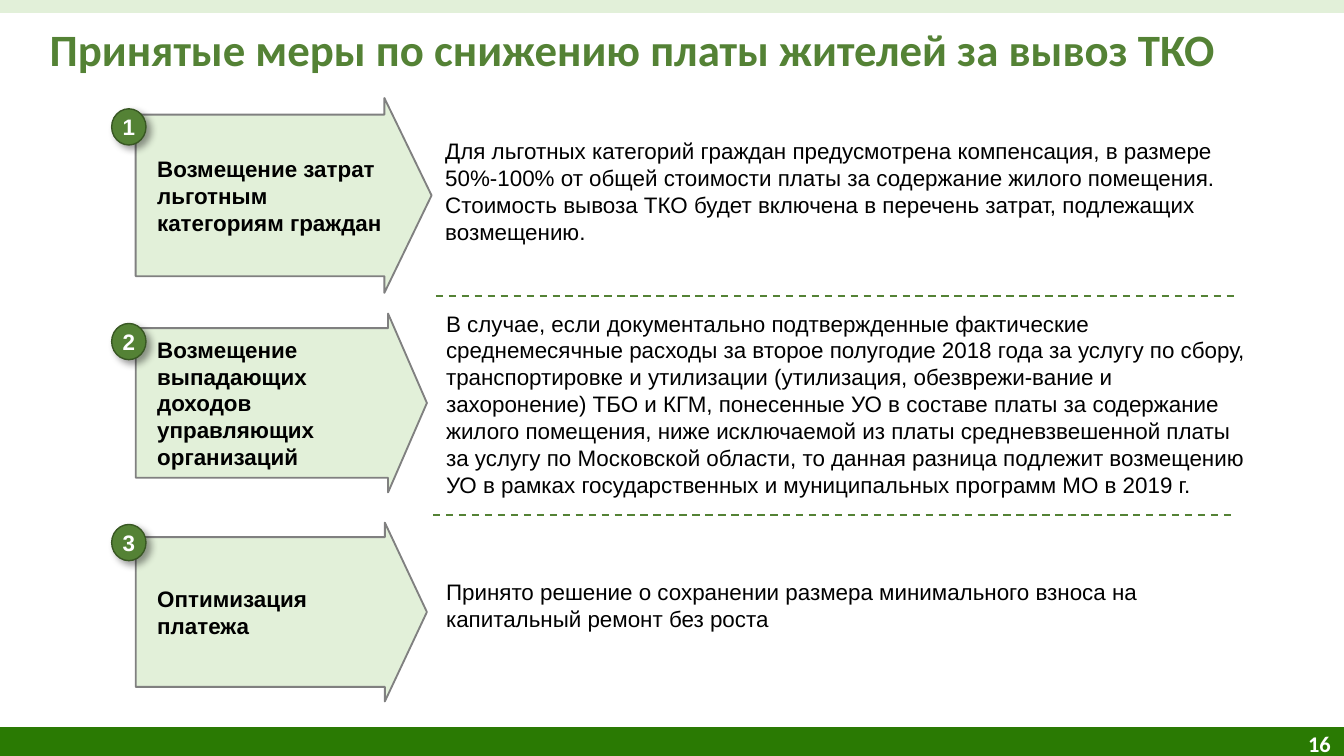
"""Build the slide on measures that lower waste removal payments."""
import pptx
import pptx.util
import pptx.dml.color
import pptx.enum.dml
import pptx.enum.shapes
import pptx.enum.text
import pptx.oxml
import pptx.oxml.ns

Pt = pptx.util.Pt
SHAPE = pptx.enum.shapes.MSO_SHAPE
ALIGN = pptx.enum.text.PP_ALIGN
ANCHOR = pptx.enum.text.MSO_ANCHOR
FIT = pptx.enum.text.MSO_AUTO_SIZE

COLOURS = {
    "pale": "E2F0D9",
    "green": "548235",
    "dark": "385723",
    "footer": "2A7A03",
    "grey": "808080",
    "black": "000000",
    "white": "FFFFFF",
}

NO_MARGINS = {"margin_left": 0, "margin_top": 0, "margin_right": 0, "margin_bottom": 0}
HEADING_FRAME = {**NO_MARGINS, "word_wrap": True, "auto_size": FIT.SHAPE_TO_FIT_TEXT,
                 "vertical_anchor": ANCHOR.MIDDLE}
DETAIL_FRAME = {**HEADING_FRAME, "vertical_anchor": ANCHOR.TOP}
ARROW_FRAME = {"margin_left": Pt(11.5), "margin_top": Pt(3), "margin_right": 0,
               "margin_bottom": Pt(3), "word_wrap": True, "vertical_anchor": ANCHOR.MIDDLE}
BADGE_FRAME = {**NO_MARGINS, "word_wrap": False, "vertical_anchor": ANCHOR.MIDDLE}
NUMBER_FRAME = {"word_wrap": True, "vertical_anchor": ANCHOR.MIDDLE}

DETAIL_FONT = {"name": "Arial", "size": Pt(12), "bold": False}
LABEL_FONT = {**DETAIL_FONT, "bold": True}
NUMBER_FONT = {**LABEL_FONT, "name": "Calibri"}
HEADING_FONT = {**NUMBER_FONT, "size": Pt(24)}

MEASURES = [
    {
        "label": "Возмещение затрат льготным категориям граждан",
        "arrow": (72.7, 52.5, 158.5, 104.4), "ratios": (0.829, 0.242), "badge_top": 58.3,
        "detail": "Для льготных категорий граждан предусмотрена компенсация, в размере "
                  "50%-100% от общей стоимости платы за содержание жилого помещения. "
                  "Стоимость вывоза ТКО будет включена в перечень затрат, подлежащих "
                  "возмещению.",
        "detail_box": (238.5, 73.7, 417, 58.2),
    },
    {
        "label": "Возмещение выпадающих доходов управляющих организаций",
        "arrow": (72.7, 168, 156, 95.8), "ratios": (0.837, 0.217), "badge_top": 173.3,
        "detail": "В случае, если документально подтвержденные фактические "
                  "среднемесячные расходы за второе полугодие 2018 года за услугу по сбору, "
                  "транспортировке и утилизации (утилизация, обезврежи-вание и захоронение) "
                  "ТБО и КГМ, понесенные УО в составе платы за содержание жилого помещения, "
                  "ниже исключаемой из платы средневзвешенной платы за услугу по Московской "
                  "области, то данная разница подлежит возмещению УО в рамках "
                  "государственных и муниципальных программ МО в 2019 г.",
        "detail_box": (239, 165.9, 429, 116.3),
    },
    {
        "label": "Оптимизация платежа",
        "arrow": (72.7, 280, 156, 95.8), "ratios": (0.837, 0.235), "badge_top": 281,
        "detail": "Принято решение о сохранении размера минимального взноса на "
                  "капитальный ремонт без роста",
        "detail_box": (239, 309.9, 429, 29.1),
    },
]
DIVIDERS = [(233.5, 158.6), (232, 275.8)]
DIVIDER_LENGTH = 430.5


def rgb(colour):
    """Return the named colour."""
    return pptx.dml.color.RGBColor.from_string(COLOURS[colour])


def apply(target, values):
    """Set each attribute of the target from a dict."""
    for attribute, value in values.items():
        setattr(target, attribute, value)


def write(part, text, frame, font, colour, alignment=ALIGN.LEFT):
    """Put one formatted paragraph into a part of the slide."""
    apply(part.text_frame, frame)
    paragraph = part.text_frame.paragraphs[0]
    paragraph.alignment = alignment
    run = paragraph.add_run()
    run.text = text
    apply(run.font, font)
    run.font.color.rgb = rgb(colour)
    return paragraph


def add_figure(slide, preset, box, fill, outline=None, width=1):
    """Add a filled preset shape without a theme shadow."""
    figure = slide.shapes.add_shape(preset, *map(Pt, box))
    figure.fill.solid()
    figure.fill.fore_color.rgb = rgb(fill)
    if outline:
        figure.line.color.rgb = rgb(outline)
        figure.line.width = Pt(width)
    else:
        figure.line.fill.background()
    figure.shadow.inherit = False
    return figure


def add_heading(slide, text):
    """Place the slide heading in the title placeholder."""
    heading = slide.shapes.title
    apply(heading, dict(zip(("left", "top", "width", "height"),
                            map(Pt, (26.6, 15.1, 680, 25.9)))))
    write(heading, text, HEADING_FRAME, HEADING_FONT, "green").line_spacing = 0.9


def add_text(slide, box, *content):
    """Add a text box with one formatted paragraph."""
    write(slide.shapes.add_textbox(*map(Pt, box)), *content)


def add_arrow(slide, measure):
    """Add the block arrow that names a measure."""
    arrow = add_figure(slide, SHAPE.RIGHT_ARROW, measure["arrow"], "pale", "grey")
    for index, ratio in enumerate(measure["ratios"]):
        arrow.adjustments[index] = ratio
    write(arrow, measure["label"], ARROW_FRAME, LABEL_FONT, "black")


def add_badge(slide, number, top):
    """Add a numbered circle with a soft shadow."""
    badge = add_figure(slide, SHAPE.OVAL, (59.8, top, 18.4, 19.4), "green", "dark", 0.75)
    effects = badge._element.spPr.find(pptx.oxml.ns.qn("a:effectLst"))
    effects.append(pptx.oxml.parse_xml(
        f'<a:outerShdw {pptx.oxml.ns.nsdecls("a")} blurRad="{Pt(4)}" dist="{Pt(3)}" '
        f'dir="2700000" algn="tl" rotWithShape="0"><a:srgbClr val="{COLOURS["black"]}">'
        '<a:alpha val="40000"/></a:srgbClr></a:outerShdw>'))
    write(badge, str(number), BADGE_FRAME, LABEL_FONT, "white", ALIGN.CENTER)


def add_divider(slide, left, top):
    """Add a dashed rule between two measures."""
    divider = slide.shapes.add_connector(
        pptx.enum.shapes.MSO_CONNECTOR.STRAIGHT,
        *map(Pt, (left, top, left + DIVIDER_LENGTH, top)))
    divider.line.color.rgb = rgb("green")
    apply(divider.line, {"width": Pt(1), "dash_style": pptx.enum.dml.MSO_LINE.DASH})
    divider._element.spPr.append(pptx.oxml.parse_xml(
        f'<a:effectLst {pptx.oxml.ns.nsdecls("a")}/>'))


def main():
    """Build and save the presentation."""
    deck = pptx.Presentation()
    apply(deck, {"slide_width": Pt(720), "slide_height": Pt(405)})
    slide = deck.slides.add_slide(deck.slide_layouts[5])
    add_figure(slide, SHAPE.RECTANGLE, (0, 389.5, 720, 18), "footer")
    add_text(slide, (538, 384, 182, 28.8), "16", NUMBER_FRAME, NUMBER_FONT, "white",
             ALIGN.RIGHT)
    add_figure(slide, SHAPE.RECTANGLE, (0, -1.5, 720, 8.5), "pale")
    add_heading(slide, "Принятые меры по снижению платы жителей за вывоз ТКО")
    for number, measure in enumerate(MEASURES, 1):
        add_arrow(slide, measure)
        add_badge(slide, number, measure["badge_top"])
        add_text(slide, measure["detail_box"], measure["detail"], DETAIL_FRAME,
                 DETAIL_FONT, "black")
    for left, top in DIVIDERS:
        add_divider(slide, left, top)
    deck.save("out.pptx")


if __name__ == "__main__":
    main()
